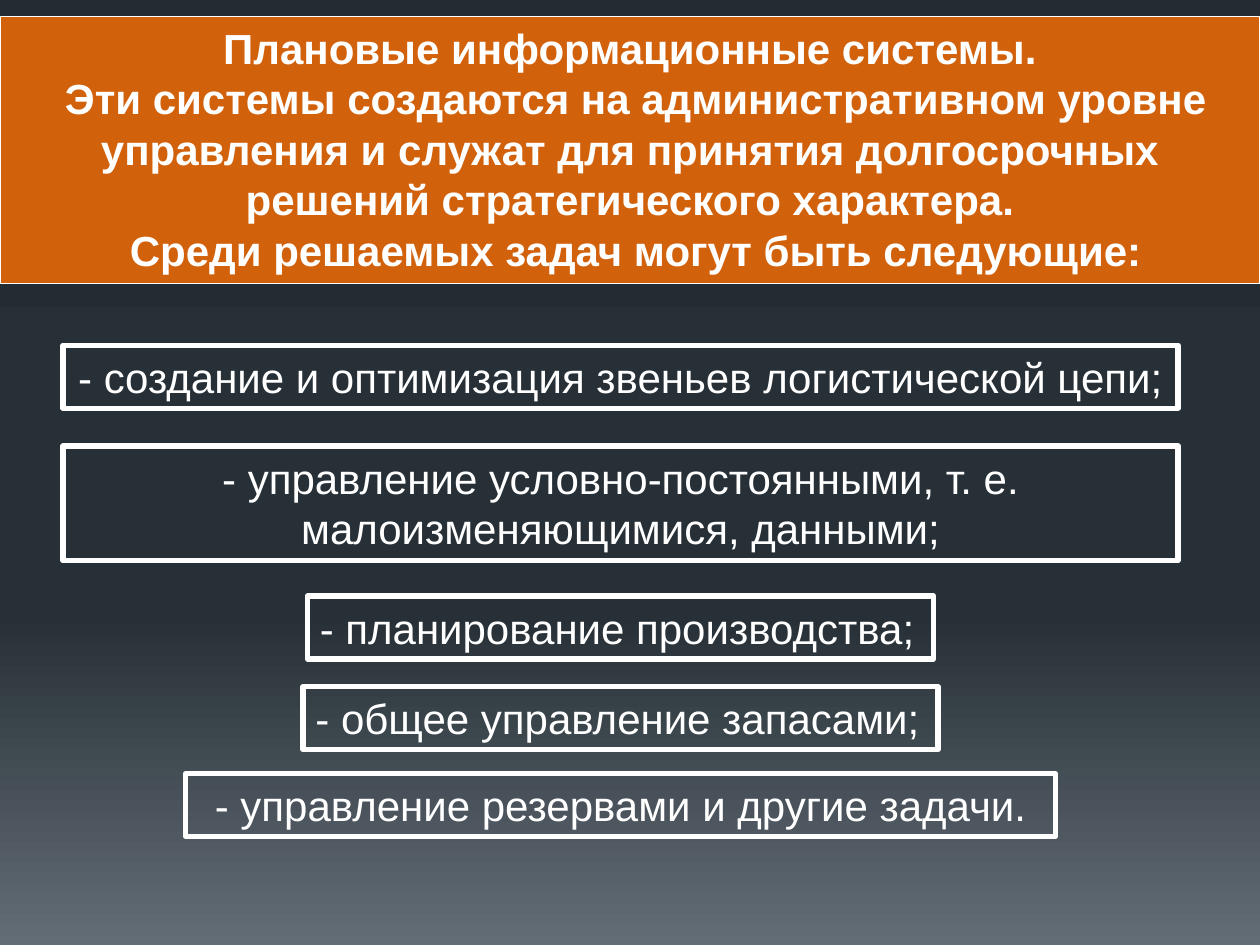
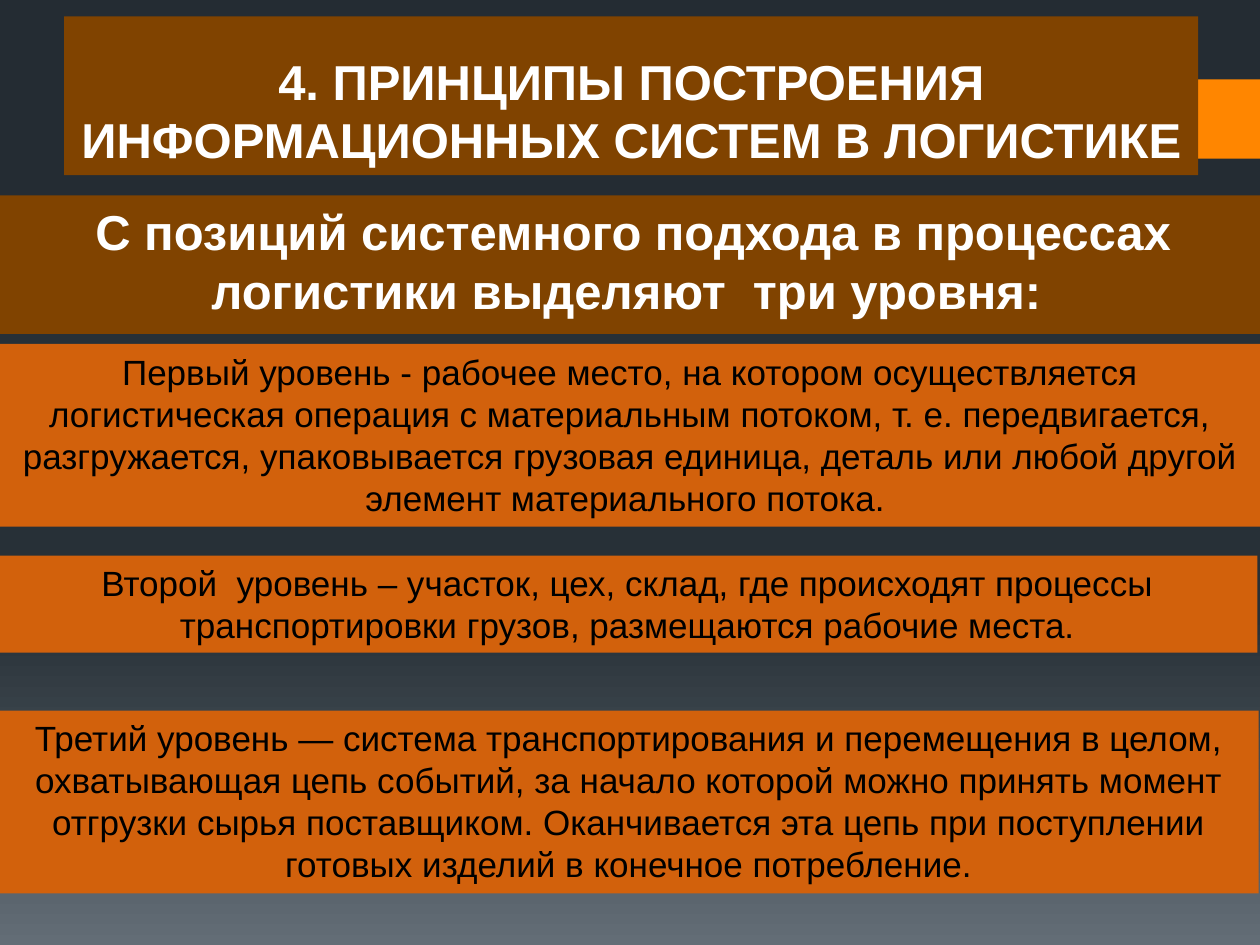
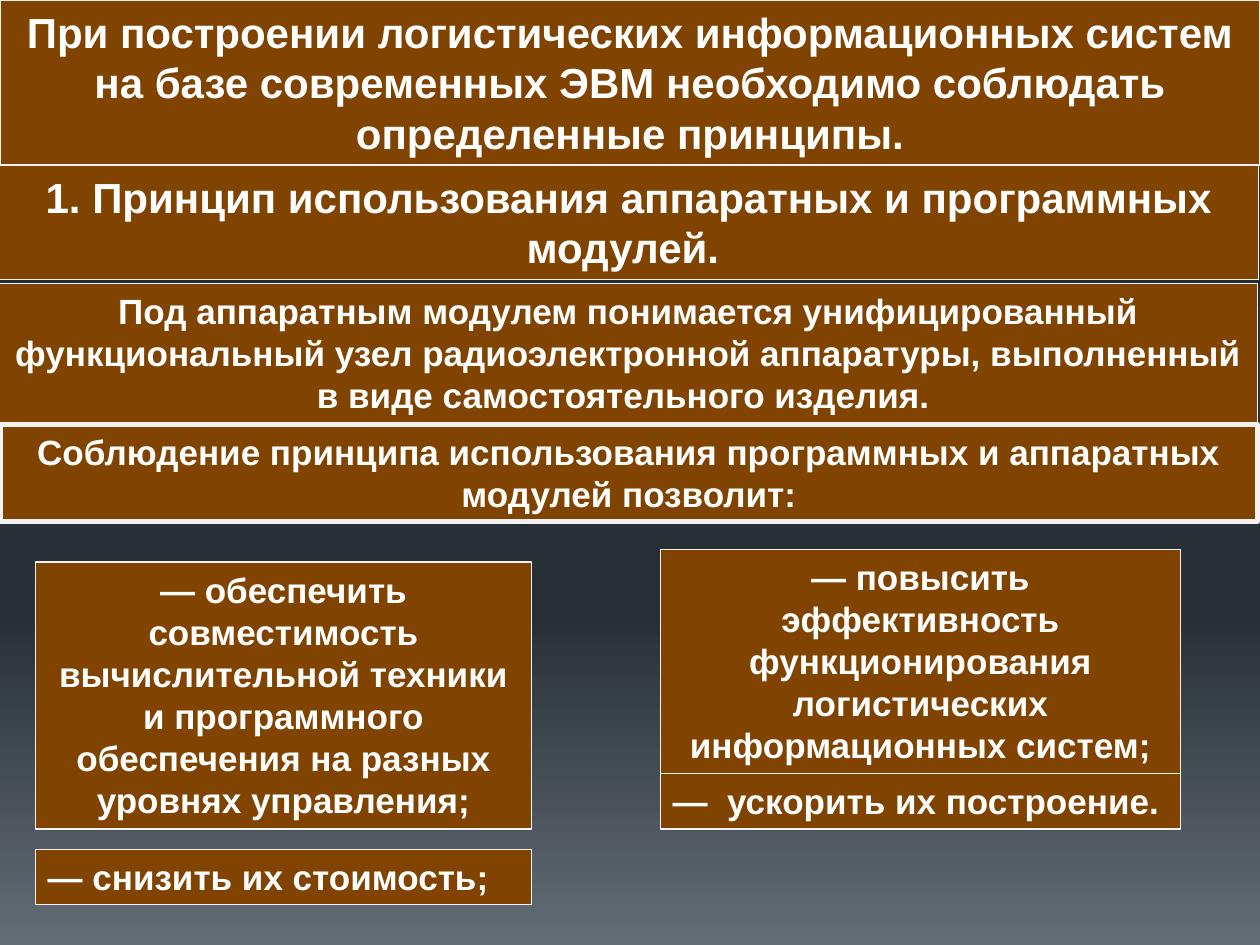
from copy import deepcopy
from dataclasses import dataclass

from pptx import Presentation
from pptx.dml.color import RGBColor
from pptx.enum.shapes import MSO_SHAPE
from pptx.enum.text import MSO_ANCHOR, MSO_AUTO_SIZE, PP_ALIGN
from pptx.oxml.ns import qn
from pptx.util import Inches, Pt

RECTANGLE = MSO_SHAPE.RECTANGLE
CENTER, LEFT = PP_ALIGN.CENTER, PP_ALIGN.LEFT
BOTTOM = MSO_ANCHOR.BOTTOM
GROW, FIXED = MSO_AUTO_SIZE.SHAPE_TO_FIT_TEXT, MSO_AUTO_SIZE.NONE
TITLE_ONLY, BLANK = 5, 6

WIDTH, HEIGHT = Inches(10), Inches(7.5)
COLUMNS, ROWS = 100, 75


@dataclass(frozen=True)
class Theme:
    font: str = "Arial"
    heading: int = 28
    lead: int = 24
    body: int = 20
    thin: float = 0.75
    thick: float = 3
    white: str = "FFFFFF"
    black: str = "000000"
    edge: str = "F2F2F2"
    orange: str = "D2610C"
    brown: str = "804300"
    marker: str = "FF8600"
    backdrop: tuple = ((0, "242C33"), (0.65, "273037"), (1, "636D76"))


THEME = Theme()


def color(code):
    return RGBColor.from_string(code)


def grid(left, top, width, height):
    """Turn columns and rows into slide lengths."""
    column, row = WIDTH / COLUMNS, HEIGHT / ROWS
    return round(left * column), round(top * row), round(width * column), round(height * row)


def paint(shape, fill=None, line=None, weight=THEME.thin):
    if fill:
        shape.fill.solid()
        shape.fill.fore_color.rgb = color(fill)
    else:
        shape.fill.background()
    if line:
        shape.line.color.rgb = color(line)
        shape.line.width = Pt(weight)
    else:
        shape.line.fill.background()


def write(shape, text, size, ink=THEME.white, bold=False, align=CENTER, wrap=True, fit=GROW):
    frame = shape.text_frame
    frame.text = text
    frame.word_wrap = wrap
    frame.auto_size = fit
    for para in frame.paragraphs:
        para.alignment = align
        for span in para.runs:
            span.font.name = THEME.font
            span.font.size = Pt(size)
            span.font.bold = bold
            span.font.color.rgb = color(ink)


def add_box(page, place, text, size, fill=None, line=None, weight=THEME.thin, **style):
    box = page.shapes.add_textbox(*grid(*place))
    paint(box, fill, line, weight)
    write(box, text, size, **style)
    return box


def add_brown_box(page, place, text, size=THEME.body, weight=THEME.thin, align=CENTER):
    add_box(page, place, text, size, THEME.brown, THEME.edge, weight, bold=True, align=align)


def set_backdrop(master):
    fill = master.background.fill
    fill.gradient()
    fill.gradient_angle = 270
    stops = next(master.element.iter(qn("a:gsLst")))
    stops.append(deepcopy(stops[-1]))
    for stop, (position, code) in zip(fill.gradient_stops, THEME.backdrop):
        stop.position = position
        stop.color.rgb = color(code)


def move_marker_to_master(page, master):
    """Draw the orange square once, so that every slide inherits it."""
    marker = page.shapes.add_shape(RECTANGLE, *grid(93.7, 6.3, 6.3, 6.3))
    marker.shadow.inherit = False
    paint(marker, THEME.marker)
    master.shapes.element.append(marker.element)


def build_planning_systems(page):
    add_box(page, (0, 1.3, 100, 21.2),
            "Плановые информационные системы.\n"
            " Эти системы создаются на административном уровне управления и служат "
            "для принятия долгосрочных решений стратегического характера.\n"
            " Среди решаемых задач могут быть следующие:",
            THEME.lead, THEME.orange, THEME.white, bold=True)
    tasks = (
        (27.4, 88.5, 5, True, "- создание и оптимизация звеньев логистической цепи;"),
        (35.4, 88.5, 9.1, True,
         "- управление условно-постоянными, т. е. малоизменяющимися, данными;"),
        (47.3, 49.7, 5, False, "- планирование производства;"),
        (54.5, 50.4, 5, False, "- общее управление запасами;"),
        (61.4, 69, 5, True, "- управление резервами и другие задачи."),
    )
    axis = 49.25
    for top, width, height, wrap, text in tasks:
        add_box(page, (axis - width / 2, top, width, height), text, THEME.lead,
                line=THEME.white, weight=THEME.thick,
                align=CENTER if wrap else LEFT, wrap=wrap)


def build_levels(page):
    title = page.shapes.title
    title.left, title.top, title.width, title.height = grid(5.1, 1.3, 90, 12.6)
    paint(title, THEME.brown)
    write(title, "4. ПРИНЦИПЫ ПОСТРОЕНИЯ ИНФОРМАЦИОННЫХ СИСТЕМ В ЛОГИСТИКЕ",
          THEME.heading, bold=True, fit=FIXED)
    title.text_frame.vertical_anchor = BOTTOM

    intro = add_box(page, (0, 15.5, 100, 11),
                    "С позиций системного подхода в процессах логистики выделяют  три уровня: ",
                    THEME.heading, THEME.brown, bold=True, fit=FIXED)
    intro.text_frame.margin_left = Inches(0.15)
    intro.text_frame.paragraphs[0].space_before = Pt(2)

    levels = (
        (0, 27.3, 14.5,
         "Первый уровень - рабочее место, на котором осуществляется логистическая операция "
         "с материальным потоком, т. е. передвигается, разгружается, упаковывается грузовая "
         "единица, деталь или любой другой элемент материального потока. "),
        (-0.2, 44.1, 7.7,
         "Второй  уровень – участок, цех, склад, где происходят процессы транспортировки "
         "грузов, размещаются рабочие места."),
        (-0.1, 56.4, 14.5,
         "Третий уровень — система транспортирования и перемещения в целом, охватывающая "
         "цепь событий, за начало которой можно принять момент отгрузки сырья поставщиком. "
         "Оканчивается эта цепь при поступлении готовых изделий в конечное потребление."),
    )
    for left, top, height, text in levels:
        add_box(page, (left, top, 100, height), text, THEME.body, THEME.orange, ink=THEME.black)


def build_module_principle(page):
    add_brown_box(page, (0, 0, 100, 13.1),
                  "При построении логистических информационных систем на базе современных "
                  "ЭВМ необходимо соблюдать определенные принципы.", THEME.lead)
    add_brown_box(page, (-0.1, 13.1, 100, 9.1),
                  "1. Принцип использования аппаратных и программных модулей. ", THEME.lead)
    add_brown_box(page, (-0.1, 22.5, 99.9, 11.1),
                  "Под аппаратным модулем понимается унифицированный функциональный узел "
                  "радиоэлектронной аппаратуры, выполненный в виде самостоятельного изделия. ")
    add_brown_box(page, (0, 33.7, 99.8, 7.7),
                  "Соблюдение принципа использования программных и аппаратных модулей позволит:",
                  weight=THEME.thick)

    left_column, right_column = (2.8, 39.4), (52.4, 41.3)
    benefits = (
        (left_column, 44.6, 21.2, CENTER,
         "— обеспечить совместимость вычислительной техники и программного обеспечения "
         "на разных уровнях управления;"),
        (right_column, 43.6, 17.8, CENTER,
         "— повысить эффективность функционирования логистических информационных систем;"),
        (left_column, 67.4, 4.4, LEFT, "— снизить их стоимость;"),
        (right_column, 61.4, 4.4, LEFT, "—  ускорить их построение."),
    )
    for (left, width), top, height, align, text in benefits:
        add_brown_box(page, (left, top, width, height), text, align=align)


def main():
    deck = Presentation()
    deck.slide_width, deck.slide_height = WIDTH, HEIGHT
    set_backdrop(deck.slide_master)
    builders = (
        (BLANK, build_planning_systems),
        (TITLE_ONLY, build_levels),
        (BLANK, build_module_principle),
    )
    for layout, build in builders:
        build(deck.slides.add_slide(deck.slide_layouts[layout]))
    move_marker_to_master(deck.slides[0], deck.slide_master)
    deck.save("out.pptx")


if __name__ == "__main__":
    main()
